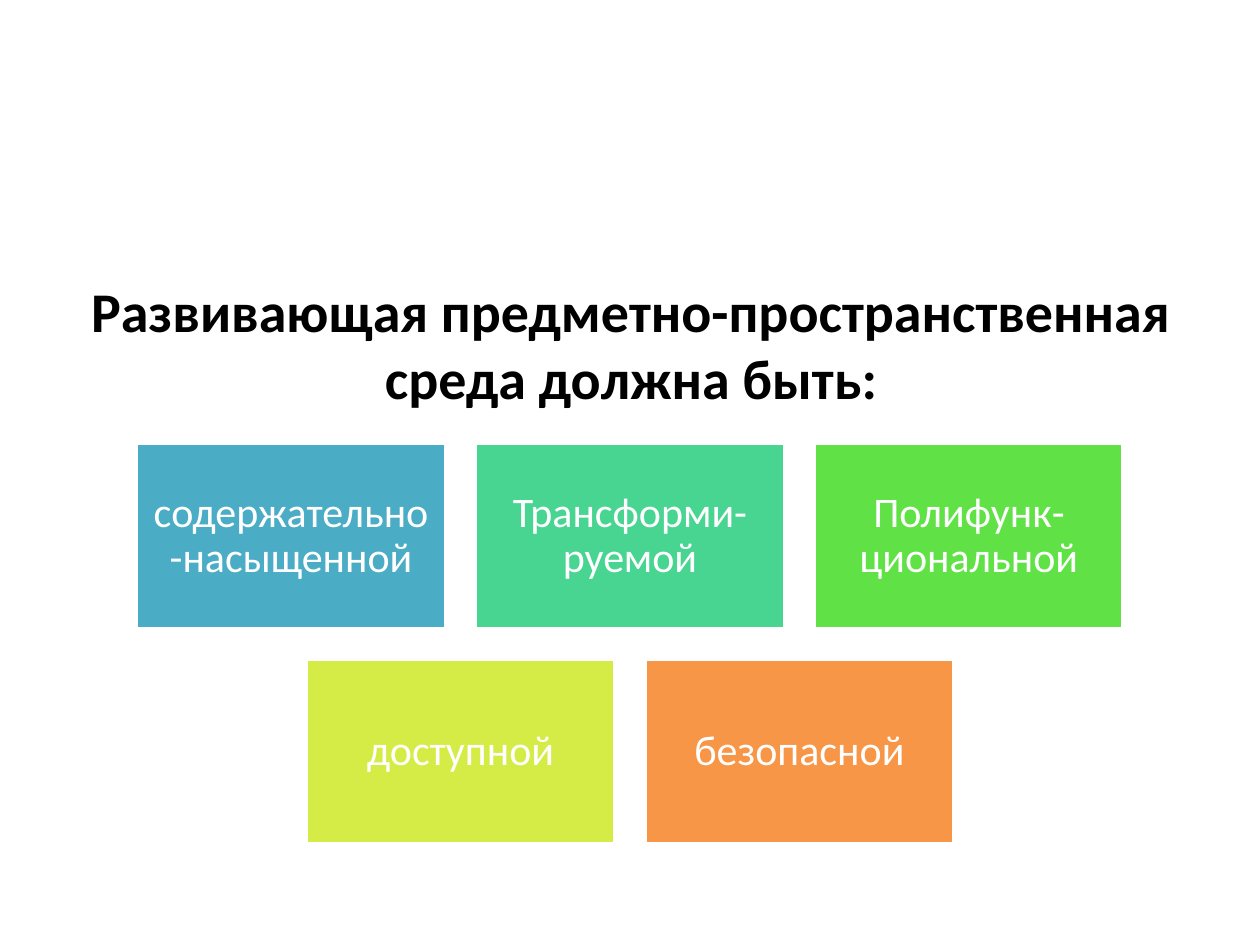
from pptx import Presentation
from pptx.dml.color import RGBColor
from pptx.enum.shapes import MSO_SHAPE
from pptx.enum.text import MSO_ANCHOR, PP_ALIGN
from pptx.util import Inches, Pt

RECTANGLE = MSO_SHAPE.RECTANGLE
MIDDLE = MSO_ANCHOR.MIDDLE
CENTER = PP_ALIGN.CENTER

TITLE = "Развивающая предметно-пространственная среда должна быть:"
QUALITY_ROWS = [
    [
        ("содержательно-насыщенной", "4BACC6"),
        ("Трансформи-руемой", "48D491"),
        ("Полифунк-циональной", "60E146"),
    ],
    [
        ("доступной", "D5EC46"),
        ("безопасной", "F79646"),
    ],
]

FONT = "Calibri"
SLIDE_WIDTH, SLIDE_HEIGHT = 10, 7.5
BOX_WIDTH, BOX_HEIGHT = 2.45, 1.47
GAP = 0.24
GRID_TOP = 3.52
BOX_MARGIN = 0.1


def color(hex_value):
    return RGBColor.from_string(hex_value)


def write_text(shape, text, size, hex_value, bold=False):
    frame = shape.text_frame
    frame.word_wrap = True
    frame.vertical_anchor = MIDDLE
    paragraph = frame.paragraphs[0]
    paragraph.text = text
    paragraph.alignment = CENTER
    paragraph.font.name = FONT
    paragraph.font.size = Pt(size)
    paragraph.font.bold = bold
    paragraph.font.color.rgb = color(hex_value)
    return frame, paragraph


def add_title(slide):
    title = slide.shapes.title
    title.left, title.top = Inches(0.51), Inches(2.1)
    title.width, title.height = Inches(9), Inches(1.25)
    write_text(title, TITLE, 32, "000000", bold=True)


def add_quality_box(slide, left, top, text, fill):
    box = slide.shapes.add_shape(
        RECTANGLE, Inches(left), Inches(top), Inches(BOX_WIDTH), Inches(BOX_HEIGHT)
    )
    box.shadow.inherit = False
    box.fill.solid()
    box.fill.fore_color.rgb = color(fill)
    box.line.color.rgb = color("FFFFFF")
    box.line.width = Pt(2)
    frame, paragraph = write_text(box, text, 24, "FFFFFF")
    frame.margin_left = frame.margin_right = Inches(BOX_MARGIN)
    frame.margin_top = frame.margin_bottom = Inches(BOX_MARGIN)
    paragraph.line_spacing = 0.9


def main():
    presentation = Presentation()
    presentation.slide_width = Inches(SLIDE_WIDTH)
    presentation.slide_height = Inches(SLIDE_HEIGHT)
    slide = presentation.slides.add_slide(presentation.slide_layouts[5])
    add_title(slide)
    for row, qualities in enumerate(QUALITY_ROWS):
        row_width = len(qualities) * (BOX_WIDTH + GAP) - GAP
        row_left = (SLIDE_WIDTH - row_width) / 2
        top = GRID_TOP + row * (BOX_HEIGHT + GAP)
        for column, (text, fill) in enumerate(qualities):
            left = row_left + column * (BOX_WIDTH + GAP)
            add_quality_box(slide, left, top, text, fill)
    presentation.save("out.pptx")


if __name__ == "__main__":
    main()
